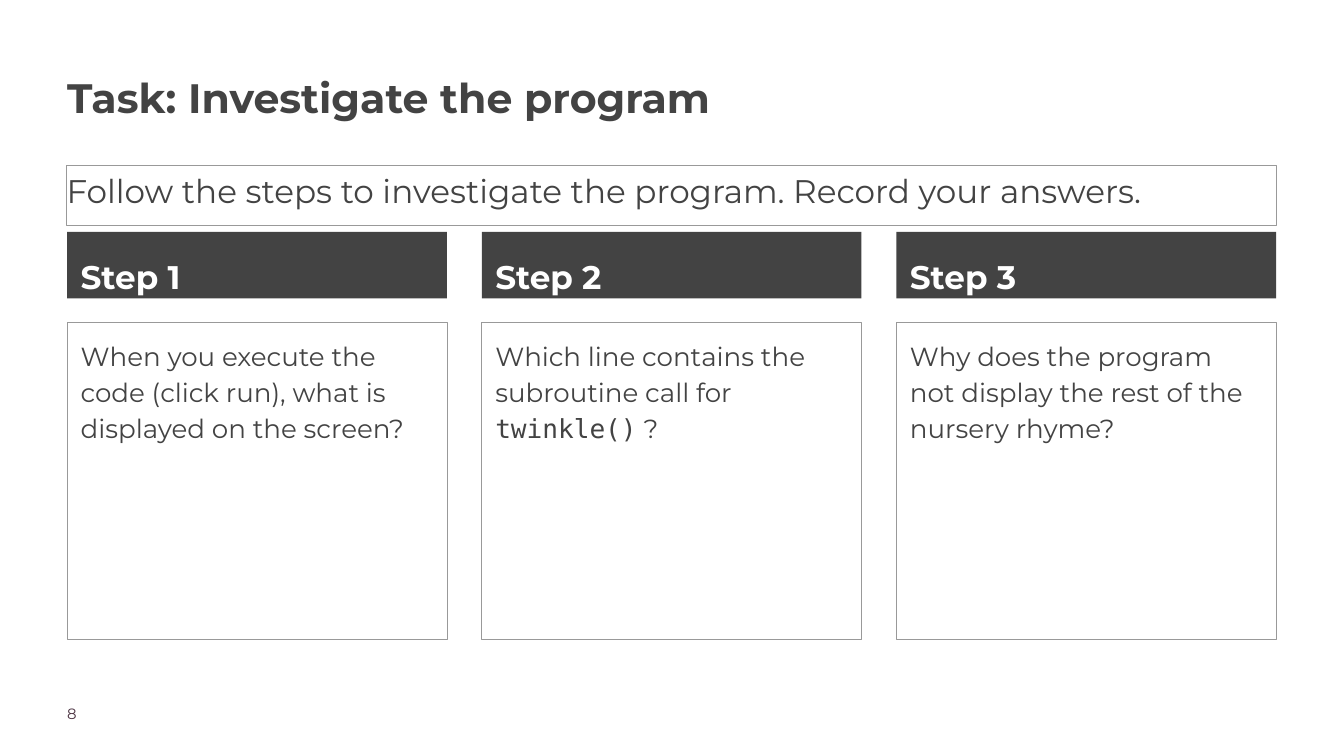
from pptx import Presentation
from pptx.dml.color import RGBColor
from pptx.enum.shapes import MSO_SHAPE as Shape
from pptx.enum.text import MSO_ANCHOR as Anchor, PP_ALIGN as Align
from pptx.util import Pt

PX = 9144  # EMU per px, 100 px to the inch
DARK, GREY, WHITE, PLUM = "434343", "999999", "FFFFFF", "4B3241"
SANS, MONO = "Montserrat", "DejaVu Sans Mono"

# Each question is a list of (text, font) spans
STEPS = [
    ("Step 1", [("When you execute the code (click run), what is displayed on the screen?", SANS)]),
    ("Step 2", [("Which line contains the subroutine call for ", SANS),
                ("twinkle()", MONO), (" ?", SANS)]),
    ("Step 3", [("Why does the program not display the rest of the nursery rhyme?", SANS)]),
]


def color(value):
    return RGBColor.from_string(value)


def add_panel(page, box, fill=None, line=None):
    panel = page.shapes.add_shape(Shape.RECTANGLE, *(n * PX for n in box))
    panel.shadow.inherit = False
    if fill:
        panel.fill.solid()
        panel.fill.fore_color.rgb = color(fill)
    else:
        panel.fill.background()
    if line:
        panel.line.color.rgb = color(line)
        panel.line.width = Pt(0.75)
    else:
        panel.line.fill.background()
    return panel


def write(shape, text, size, ink=DARK, bold=False, inset=0, spacing=1.15, after=0):
    """Fill a shape with one paragraph; text is a string or (text, font) spans."""
    frame = shape.text_frame
    frame.word_wrap = True
    frame.vertical_anchor = Anchor.TOP
    frame.margin_left = frame.margin_right = inset * PX
    frame.margin_top = frame.margin_bottom = inset * PX
    para = frame.paragraphs[0]
    para.alignment = Align.LEFT
    para.line_spacing = spacing
    para.space_after = Pt(after)
    for words, font in [(text, SANS)] if isinstance(text, str) else text:
        span = para.add_run()
        span.text = words
        span.font.name = font
        span.font.size = Pt(size)
        span.font.bold = bold
        span.font.color.rgb = color(ink)


def add_label(page, box, text, **style):
    write(page.shapes.add_textbox(*(n * PX for n in box)), text, **style)


def add_step(page, box, heading, question):
    left, top, width, height = box
    header = add_panel(page, (left, top, width, 99), fill=DARK)
    write(header, heading, size=35, ink=WHITE, bold=True, inset=20, spacing=1.3)
    body = add_panel(page, (left, top + 134, width, height - 134), line=GREY)
    write(body, question, size=28, inset=20, after=12)


def add_steps(page, box, gap):
    left, top, width, height = box
    column = (width - gap * (len(STEPS) - 1)) // len(STEPS)
    for index, (heading, question) in enumerate(STEPS):
        add_step(page, (left + index * (column + gap), top, column, height), heading, question)


def main():
    deck = Presentation()
    deck.slide_width, deck.slide_height = 2000 * PX, 1125 * PX
    page = deck.slides.add_slide(deck.slide_layouts[6])

    # Title and instruction
    add_label(page, (100, 97, 1444, 178), "Task: Investigate the program", size=44, bold=True)
    intro = add_panel(page, (99, 246, 1800, 89), line=GREY)
    write(intro, "Follow the steps to investigate the program. Record your answers.",
          size=35, after=20)

    # Three step columns
    add_steps(page, (100, 345, 1799, 606), gap=52)

    # Page number
    add_label(page, (100, 1048, 157, 39), "8", size=16, ink=PLUM, spacing=1.0)

    deck.save("out.pptx")


if __name__ == "__main__":
    main()
